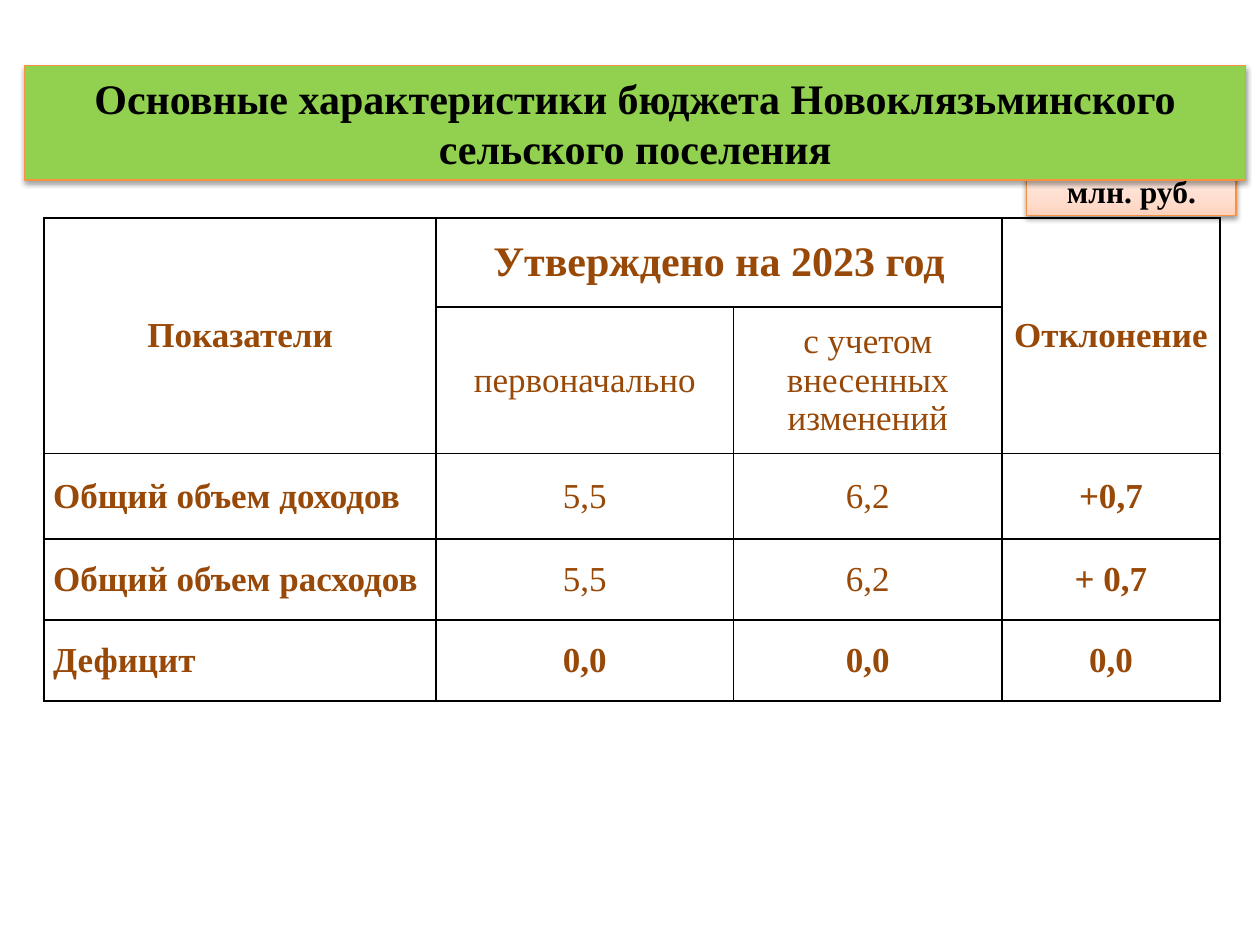
import pptx
import pptx.dml.color
import pptx.enum.shapes
import pptx.enum.text
import pptx.oxml
import pptx.oxml.ns
import pptx.util

Cm = pptx.util.Cm
Pt = pptx.util.Pt
RGBColor = pptx.dml.color.RGBColor
CENTER = pptx.enum.text.PP_ALIGN.CENTER
LEFT = pptx.enum.text.PP_ALIGN.LEFT
MIDDLE = pptx.enum.text.MSO_ANCHOR.MIDDLE

FONT = "Times New Roman"
BLACK = RGBColor(0x00, 0x00, 0x00)
BROWN = RGBColor(0x98, 0x48, 0x07)
GREEN = RGBColor(0x92, 0xD0, 0x50)
ORANGE = RGBColor(0xF6, 0x92, 0x40)
PEACH_STOPS = [
    (0, RGBColor(0xFF, 0xD2, 0xBD)),
    (35, RGBColor(0xFF, 0xDE, 0xD0)),
    (100, RGBColor(0xFF, 0xF2, 0xED)),
]

COL_WIDTHS = [7.9, 6, 5.41, 4.39]
ROW_HEIGHTS = [1.8, 2.95, 1.73, 1.63, 1.63]
ROWS = [
    ["Показатели", "Утверждено на 2023 год", "", "Отклонение"],
    ["", "первоначально", "с учетом внесенных изменений", ""],
    ["Общий объем доходов", "5,5", "6,2", "+0,7"],
    ["Общий объем расходов", "5,5", "6,2", "+ 0,7"],
    ["Дефицит", "0,0", "0,0", "0,0"],
]
MERGES = [((0, 0), (1, 0)), ((0, 1), (0, 2)), ((0, 3), (1, 3))]


def xml(text):
    return pptx.oxml.parse_xml(text.replace(">", f' {pptx.oxml.ns.nsdecls("a")}>', 1))


def set_text(p, text, size, color, bold=True, align=CENTER):
    p.text = text
    p.alignment = align
    p.font.name = FONT
    p.font.size = Pt(size)
    p.font.bold = bold
    p.font.color.rgb = color


def add_shadow(sp):
    sp.shadow.inherit = False
    effects = sp._element.spPr.find(pptx.oxml.ns.qn("a:effectLst"))
    effects.append(xml(
        f'<a:outerShdw blurRad="{Pt(3.1)}" dist="{Pt(1.6)}" dir="5400000" rotWithShape="0">'
        f'<a:srgbClr val="{BLACK}"><a:alpha val="38000"/></a:srgbClr></a:outerShdw>'))


def fill_gradient(sp, stops):
    """Fill from the bottom edge to the top."""
    sp.fill.gradient()
    sp.fill.gradient_angle = 90
    gs_list = sp._element.spPr.find(".//" + pptx.oxml.ns.qn("a:gsLst"))
    gs_list.clear()
    for position, color in stops:
        gs_list.append(xml(f'<a:gs pos="{position * 1000}"><a:srgbClr val="{color}"/></a:gs>'))


def add_banner(slide, left, top, width, height, text, size):
    sp = slide.shapes.add_shape(pptx.enum.shapes.MSO_SHAPE.RECTANGLE,
                                Cm(left), Cm(top), Cm(width), Cm(height))
    sp.line.color.rgb = ORANGE
    sp.line.width = Pt(0.75)
    add_shadow(sp)
    tf = sp.text_frame
    tf.word_wrap = True
    tf.vertical_anchor = MIDDLE
    set_text(tf.paragraphs[0], text, size, BLACK)
    return sp


def style_cell(cell):
    cell.margin_left = cell.margin_right = Cm(0.18)
    cell.margin_top = cell.margin_bottom = 0
    cell.vertical_anchor = MIDDLE
    # Borders come before the fill in the cell properties
    tc_pr = cell._tc.get_or_add_tcPr()
    for side in "LRTB":
        tc_pr.append(xml(f'<a:ln{side} w="{Pt(1)}"><a:solidFill>'
                         f'<a:srgbClr val="{BLACK}"/></a:solidFill></a:ln{side}>'))
    cell.fill.background()


def add_budget_table(slide, left, top):
    table = slide.shapes.add_table(
        len(ROW_HEIGHTS), len(COL_WIDTHS), Cm(left), Cm(top),
        Cm(sum(COL_WIDTHS)), Cm(sum(ROW_HEIGHTS))).table
    table.first_row = table.horz_banding = False
    for column, width in zip(table.columns, COL_WIDTHS):
        column.width = Cm(width)
    for row, height in zip(table.rows, ROW_HEIGHTS):
        row.height = Cm(height)

    last_row, last_col = len(ROWS) - 1, len(COL_WIDTHS) - 1
    for r, values in enumerate(ROWS):
        for c, value in enumerate(values):
            cell = table.cell(r, c)
            style_cell(cell)
            set_text(cell.text_frame.paragraphs[0], value,
                     size=24 if (r, c) == (0, 1) else 20,
                     color=BROWN,
                     bold=r in (0, last_row) or c in (0, last_col),
                     align=LEFT if r > 1 and c == 0 else CENTER)
    for start, end in MERGES:
        table.cell(*start).merge(table.cell(*end))


def main():
    prs = pptx.Presentation()
    prs.slide_width, prs.slide_height = Cm(25.4), Cm(19.05)
    slide = prs.slides.add_slide(prs.slide_layouts[6])

    # Budget figures
    add_budget_table(slide, 0.89, 4.39)

    # Unit label, partly under the title
    unit = add_banner(slide, 20.7, 3.33, 4.22, 1.02, "млн. руб.", 18)
    fill_gradient(unit, PEACH_STOPS)

    # Title
    title = add_banner(
        slide, 0.5, 1.32, 24.61, 2.31,
        "Основные характеристики бюджета Новоклязьминского сельского поселения", 24)
    title.fill.solid()
    title.fill.fore_color.rgb = GREEN

    prs.save("out.pptx")


if __name__ == "__main__":
    main()
